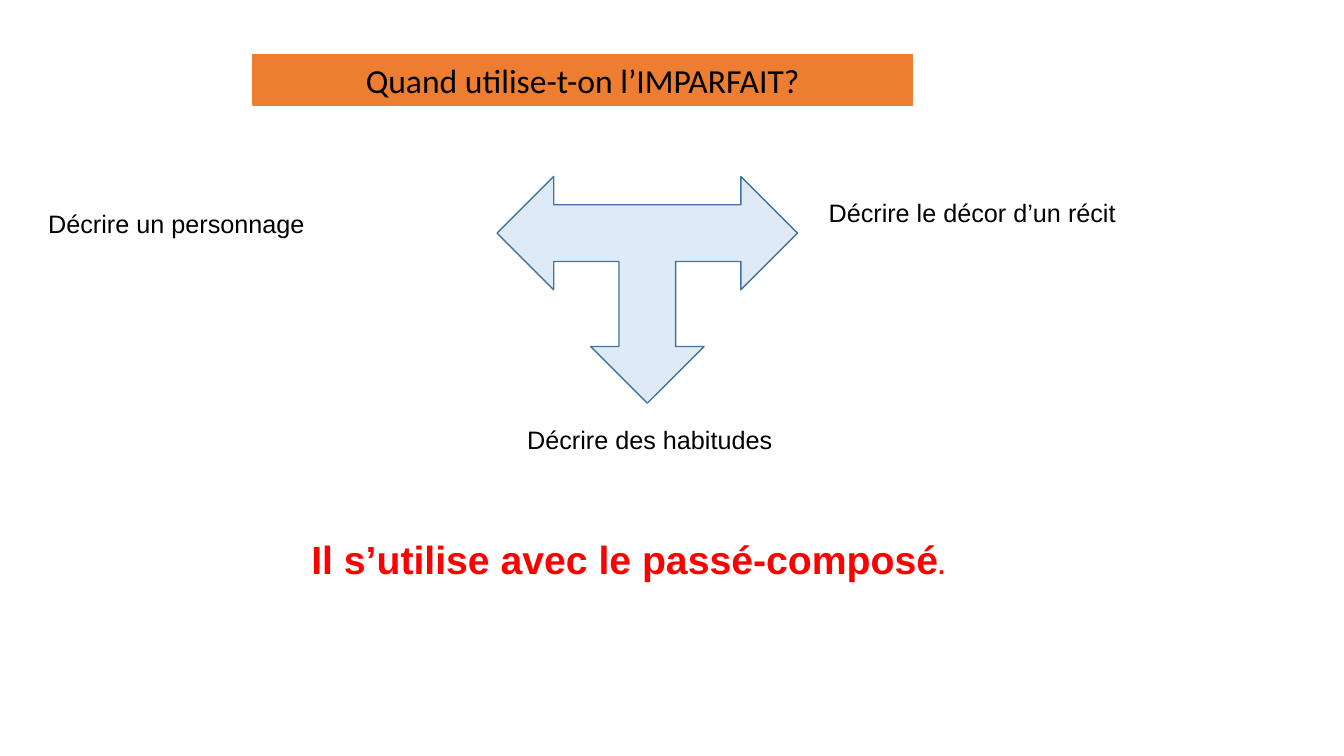
from pptx import Presentation
from pptx.dml.color import RGBColor
from pptx.enum.shapes import MSO_SHAPE
from pptx.enum.text import MSO_ANCHOR, MSO_AUTO_SIZE, PP_ALIGN
from pptx.util import Inches, Pt

ARROW = MSO_SHAPE.LEFT_RIGHT_UP_ARROW
TOP, MIDDLE = MSO_ANCHOR.TOP, MSO_ANCHOR.MIDDLE
LEFT, CENTER = PP_ALIGN.LEFT, PP_ALIGN.CENTER
NO_FIT = MSO_AUTO_SIZE.NONE
COLORS = {"orange": "ED7D31", "pale": "DEEBF7", "outline": "43739E",
          "black": "000000", "red": "FF0000"}

# Content: each span is (text, size, bold); boxes are left, top, width, height
TITLE = ("Quand utilise-t-on l’IMPARFAIT?", 24, False)
TITLE_BOX = (2.51, 0.54, 6.54, 0.5)
ARROW_BOX = (4.93, 1.75, 2.98, 2.25)
USES = [
    ("Décrire un personnage", (0.38, 2.02, 3.36, 0.71)),
    ("Décrire des habitudes", (5.13, 4.16, 5.58, 0.4)),
    ("Décrire le décor d’un récit", (8.12, 1.91, 4.73, 0.4)),
]
RULE = [("Il s’utilise avec le passé-composé", 28, True), (".", 18, True)]
RULE_BOX = (2.99, 5.26, 6.87, 0.57)


def color(name):
    return RGBColor.from_string(COLORS[name])


def inches(box):
    return [Inches(length) for length in box]


def paint(shape, fill, line):
    shape.fill.solid()
    shape.fill.fore_color.rgb = color(fill)
    shape.line.color.rgb = color(line)
    shape.line.width = Pt(1)


def write(shape, spans, font="Arial", ink="black", align=LEFT, anchor=TOP):
    frame = shape.text_frame
    frame.word_wrap = True
    frame.auto_size = NO_FIT
    frame.vertical_anchor = anchor
    para = frame.paragraphs[0]
    para.alignment = align
    for text, size, bold in spans:
        span = para.add_run()
        span.text = text
        span.font.name = font
        span.font.size = Pt(size)
        span.font.bold = bold
        span.font.color.rgb = color(ink)


deck = Presentation()
deck.slide_width, deck.slide_height = Inches(13.33), Inches(7.5)
page = deck.slides.add_slide(deck.slide_layouts[5])

# Title banner
title = page.shapes.title
title.left, title.top, title.width, title.height = inches(TITLE_BOX)
paint(title, "orange", "orange")
write(title, [TITLE], font="Calibri", align=CENTER, anchor=MIDDLE)

# Three-way arrow, turned to point down
arrow = page.shapes.add_shape(ARROW, *inches(ARROW_BOX))
arrow.rotation = 180
arrow.shadow.inherit = False
paint(arrow, "pale", "outline")

# Uses around the arrow
for use, box in USES:
    write(page.shapes.add_textbox(*inches(box)), [(use, 18, False)])

# Closing rule
write(page.shapes.add_textbox(*inches(RULE_BOX)), RULE, ink="red")

deck.save("out.pptx")
